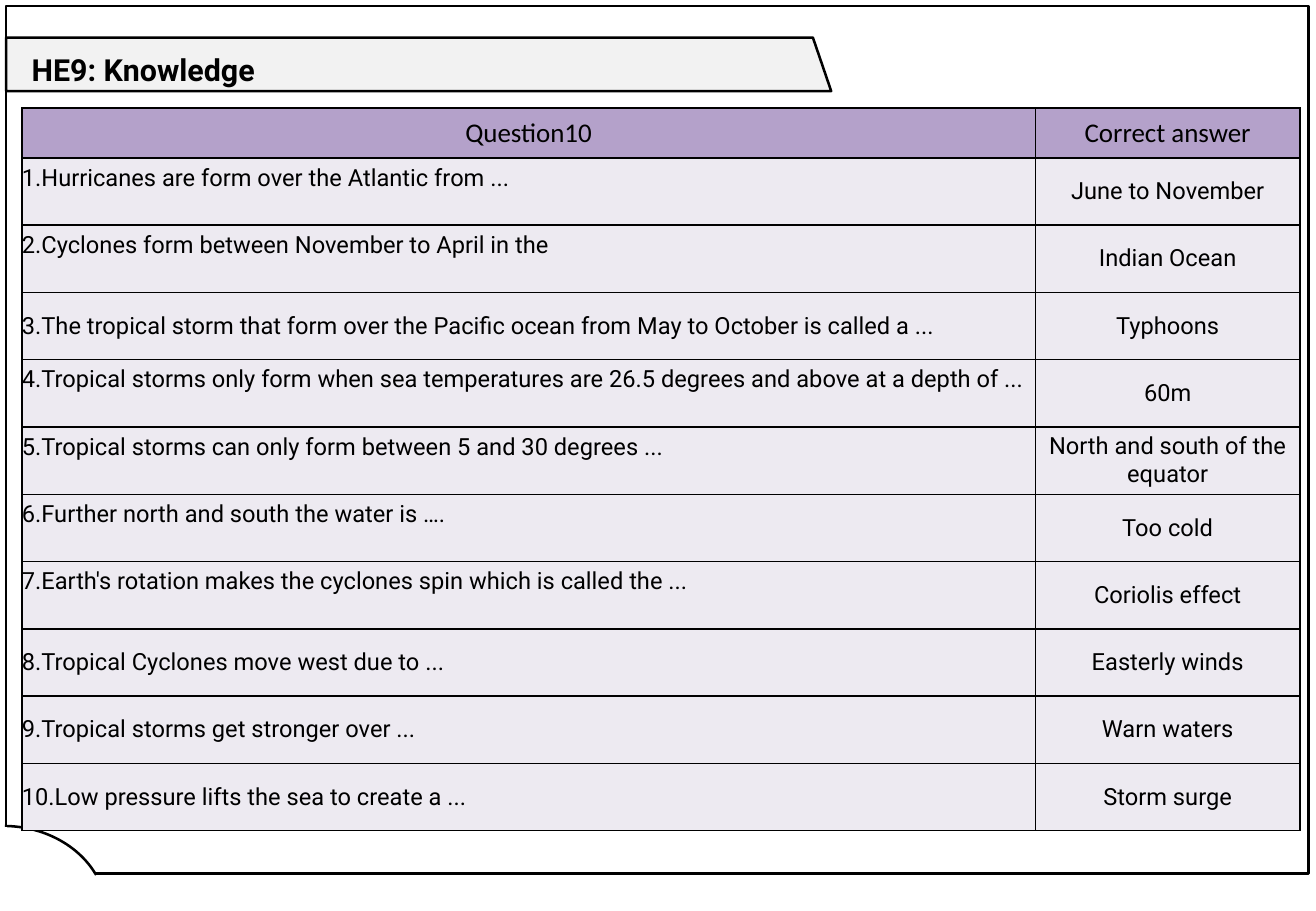
from dataclasses import dataclass

from lxml.etree import SubElement
from pptx import Presentation
from pptx.dml.color import RGBColor
from pptx.enum.shapes import MSO_SHAPE as Preset
from pptx.enum.text import MSO_ANCHOR as Anchor, MSO_AUTO_SIZE as AutoSize, PP_ALIGN as Align
from pptx.oxml.ns import qn
from pptx.util import Inches, Pt

CELL = Inches(0.01)  # the slide is a grid of 1083 columns by 750 rows
COLUMNS, ROWS = 1083, 750
COLORS = {
    "ink": "000000",
    "paper": "FFFFFF",
    "banner": "F2F2F2",
    "header": "B4A1CA",
    "body": "EDEAF1",
}
TABLE_COLUMNS = (834, 218)
HEADER_ROWS, TABLE_ROWS = 41, 595


@dataclass(frozen=True)
class Box:
    column: int
    row: int
    columns: int
    rows: int

    def lengths(self) -> tuple:
        return tuple(CELL * n for n in (self.column, self.row, self.columns, self.rows))


@dataclass(frozen=True)
class Question:
    text: str
    answer: str
    raised: bool = False


@dataclass(frozen=True)
class CellStyle:
    fill: str
    font: str
    size: int
    align: Align = Align.CENTER
    raised: bool = False


QUESTIONS = (
    Question("Hurricanes are form over the Atlantic from ...", "June to November", True),
    Question("Cyclones form between November to April in the", "Indian Ocean", True),
    Question("The tropical storm that form over the Pacific ocean from May to October "
             "is called a ...", "Typhoons"),
    Question("Tropical storms only form when sea temperatures are 26.5 degrees and above "
             "at a depth of ...", "60m", True),
    Question("Tropical storms can only form between 5 and 30 degrees ...",
             "North and south of the equator", True),
    Question("Further north and south the water is ….", "Too cold", True),
    Question("Earth's rotation makes the cyclones spin which is called the ...",
             "Coriolis effect", True),
    Question("Tropical Cyclones move west due to ...", "Easterly winds"),
    Question("Tropical storms get stronger over ...", "Warn waters"),
    Question("Low pressure lifts the sea to create a ...", "Storm surge"),
)


def color(name: str) -> RGBColor:
    return RGBColor.from_string(COLORS[name])


def paint(shape, fill: str | None, outlined: bool = True) -> None:
    shape.shadow.inherit = False
    if fill:
        shape.fill.solid()
        shape.fill.fore_color.rgb = color(fill)
    else:
        shape.fill.background()
    if outlined:
        shape.line.color.rgb = color("ink")
        shape.line.width = Pt(1.5)
    else:
        shape.line.fill.background()


def format_paragraph(paragraph, font: str, size: int, align: Align, bold: bool = False) -> None:
    paragraph.alignment = align
    paragraph.font.name = font
    paragraph.font.size = Pt(size)
    paragraph.font.bold = bold
    paragraph.font.color.rgb = color("ink")


def add_border(cell) -> None:
    properties = cell._tc.get_or_add_tcPr()
    for side in ("lnL", "lnR", "lnT", "lnB"):
        line = SubElement(properties, qn(f"a:{side}"), w=str(Pt(1)))
        fill = SubElement(line, qn("a:solidFill"))
        SubElement(fill, qn("a:srgbClr"), val=COLORS["ink"])


def fill_cell(cell, text: str, style: CellStyle) -> None:
    add_border(cell)
    cell.fill.solid()
    cell.fill.fore_color.rgb = color(style.fill)
    cell.margin_left = cell.margin_right = cell.margin_bottom = 0
    cell.margin_top = Inches(0.05) if style.raised else 0
    cell.vertical_anchor = Anchor.TOP if style.raised else Anchor.MIDDLE
    cell.text = text
    format_paragraph(cell.text_frame.paragraphs[0], style.font, style.size, style.align)


def draw_backdrop(shapes) -> None:
    builder = shapes.build_freeform(5, 31, scale=float(CELL))
    builder.add_line_segments([(669, 31), (684, 75), (5, 75)], close=True)
    paint(builder.convert_to_shape(), "banner")

    paint(shapes.add_shape(Preset.RECTANGLE, *Box(5, 5, 1072, 714).lengths()), None)

    corner = shapes.add_shape(Preset.ARC, *Box(-82, 680, 170, 145).lengths())
    for index, degrees in enumerate((270.88, 337.11)):
        corner.adjustments[index] = degrees * 0.6
    paint(corner, "paper")

    edge_mask = shapes.add_shape(Preset.RECTANGLE, *Box(1, 681, 5, 10).lengths())
    paint(edge_mask, "paper", outlined=False)


def place_title(shapes) -> None:
    """Fill the title placeholder and bring it in front of the banner."""
    title = shapes.title
    title.left, title.top, title.width, title.height = Box(16, 37, 300, 40).lengths()
    frame = title.text_frame
    frame.text = "HE9: Knowledge"
    frame.vertical_anchor = Anchor.TOP
    frame.auto_size = AutoSize.SHAPE_TO_FIT_TEXT
    format_paragraph(frame.paragraphs[0], "Roboto", 18, Align.LEFT, bold=True)
    shapes._spTree.append(title._element)


def draw_questions(shapes) -> None:
    box = Box(18, 89, sum(TABLE_COLUMNS), TABLE_ROWS)
    table = shapes.add_table(len(QUESTIONS) + 1, len(TABLE_COLUMNS), *box.lengths()).table
    for column, width in zip(table.columns, TABLE_COLUMNS):
        column.width = CELL * width
    question_height = CELL * (TABLE_ROWS - HEADER_ROWS) // len(QUESTIONS)
    for index, row in enumerate(table.rows):
        row.height = question_height if index else CELL * HEADER_ROWS

    for column, heading in enumerate(("Question10", "Correct answer")):
        fill_cell(table.cell(0, column), heading, CellStyle("header", "Calibri", 16))
    for number, question in enumerate(QUESTIONS, 1):
        style = CellStyle("body", "Roboto", 14, Align.LEFT, question.raised)
        fill_cell(table.cell(number, 0), f"{number}.{question.text}", style)
        fill_cell(table.cell(number, 1), question.answer, CellStyle("body", "Roboto", 14))


def main() -> None:
    presentation = Presentation()
    presentation.slide_width = CELL * COLUMNS
    presentation.slide_height = CELL * ROWS
    title_only = presentation.slide_layouts.get_by_name("Title Only")
    shapes = presentation.slides.add_slide(title_only).shapes
    draw_backdrop(shapes)
    place_title(shapes)
    draw_questions(shapes)
    presentation.save("out.pptx")


if __name__ == "__main__":
    main()
